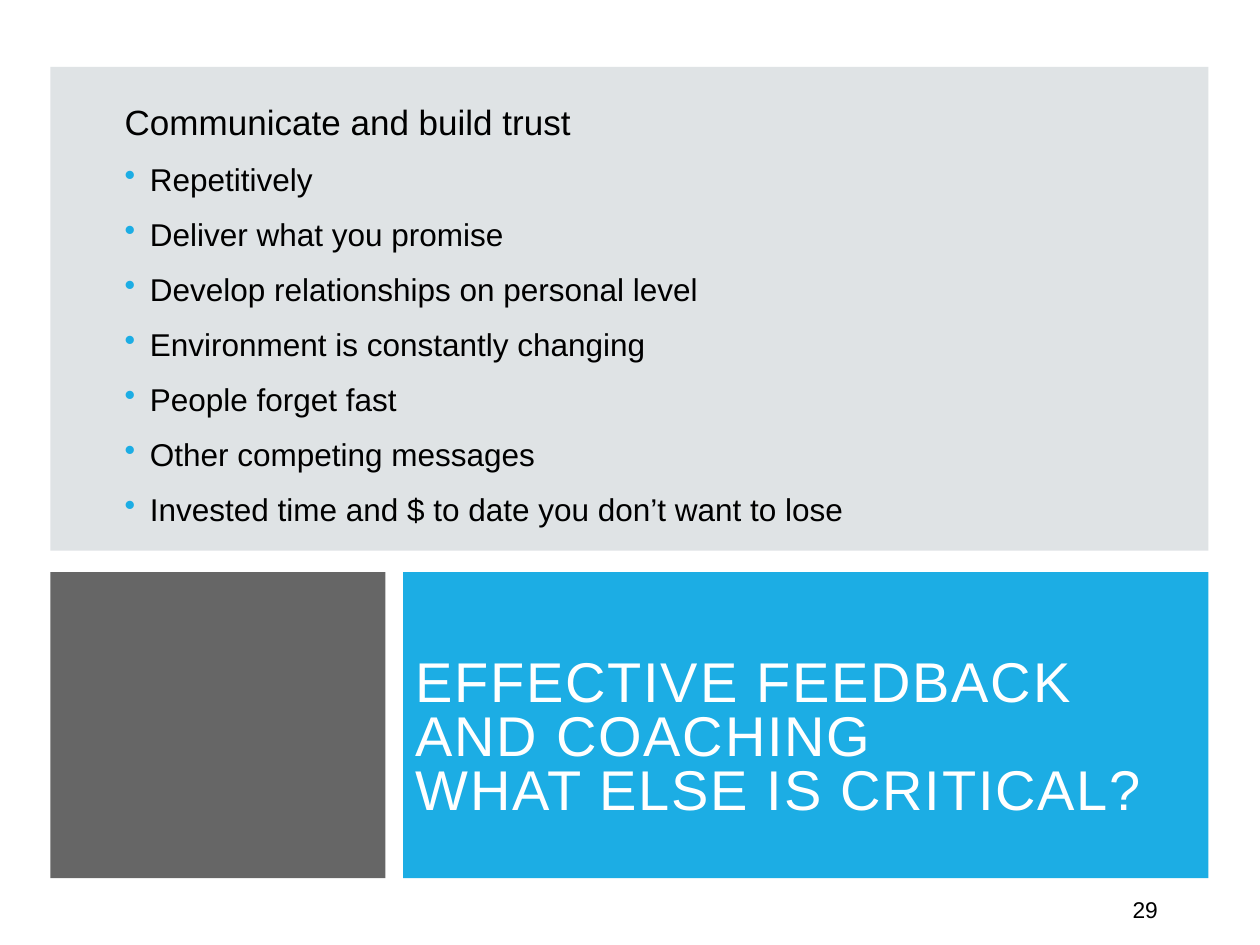
from dataclasses import dataclass

from lxml import etree
from pptx import Presentation
from pptx.enum import shapes, text
from pptx.oxml.ns import qn
from pptx.dml.color import RGBColor
from pptx.util import Pt

COLORS = {
    "white": "FFFFFF",
    "black": "000000",
    "pale": "DFE3E5",
    "blue": "1CADE4",
}
FONT = "Arial"
BULLETS = (
    "Repetitively",
    "Deliver what you promise",
    "Develop relationships on personal level",
    "Environment is constantly changing",
    "People forget fast",
    "Other competing messages",
    "Invested time and $ to date you don’t want to lose",
)


@dataclass(frozen=True)
class Box:
    left: float
    top: float
    width: float
    height: float

    def lengths(self) -> tuple:
        return tuple(Pt(n) for n in (self.left, self.top, self.width, self.height))


@dataclass(frozen=True)
class Panel:
    box: Box
    color: str
    opacity: int = 100


PANELS = (
    Panel(Box(0, 0, 720, 540), "white"),
    Panel(Box(28.8, 38.2, 661.7, 276.5), "pale"),
    Panel(Box(28.8, 326.9, 191.5, 175), "black", 60),
    Panel(Box(230.4, 326.9, 460.1, 175), "blue"),
)


def add_panel(slide, panel: Panel) -> None:
    """Draw a borderless filled rectangle."""
    shape = slide.shapes.add_shape(shapes.MSO_SHAPE.RECTANGLE, *panel.box.lengths())
    shape.shadow.inherit = False
    shape.line.fill.background()
    shape.fill.solid()
    shape.fill.fore_color.rgb = RGBColor.from_string(COLORS[panel.color])
    if panel.opacity < 100:
        color = shape.fill._xPr.find(f".//{qn('a:srgbClr')}")
        etree.SubElement(color, qn("a:alpha"), val=str(panel.opacity * 1000))


def add_frame(slide, box: Box, anchor=text.MSO_ANCHOR.MIDDLE):
    """Add a wrapping text box and return its text frame."""
    frame = slide.shapes.add_textbox(*box.lengths()).text_frame
    frame.word_wrap = True
    frame.vertical_anchor = anchor
    return frame


def write(paragraph, words: str, size: float, color: str, spacing: float, before: float = 0) -> None:
    """Fill and format one paragraph."""
    paragraph.text = words
    paragraph.font.name = FONT
    paragraph.font.size = Pt(size)
    paragraph.font.color.rgb = RGBColor.from_string(COLORS[color])
    paragraph.line_spacing = spacing
    paragraph.space_before = Pt(before)


def add_bullet(paragraph, color: str, indent: float) -> None:
    """Give a paragraph a coloured bullet with a hanging indent."""
    properties = paragraph._p.get_or_add_pPr()
    properties.set("marL", str(Pt(indent)))
    properties.set("indent", str(-Pt(indent)))
    bullet_color = etree.Element(qn("a:buClr"))
    etree.SubElement(bullet_color, qn("a:srgbClr"), val=COLORS[color])
    bullet = etree.Element(qn("a:buChar"), char="•")
    defaults = properties.find(qn("a:defRPr"))
    defaults.addprevious(bullet_color)
    defaults.addprevious(bullet)


def add_title(slide) -> None:
    """Add the letter-spaced title."""
    paragraph = add_frame(slide, Box(230.4, 345.6, 467.3, 154.8)).paragraphs[0]
    words = "EFFECTIVE FEEDBACK AND COACHING\vWHAT ELSE IS CRITICAL?"
    write(paragraph, words, 32, "white", 0.8)
    for run in paragraph.runs:
        run.font._element.set("spc", "100")


def add_body(slide) -> None:
    """Add the heading and its bullet list."""
    frame = add_frame(slide, Box(67.7, 72, 586.1, 250.6))
    frame.margin_left = frame.margin_right = frame.margin_top = Pt(3.6)
    frame.margin_bottom = Pt(36)
    write(frame.paragraphs[0], "Communicate and build trust", 20, "black", 0.9, 6)
    for words in BULLETS:
        paragraph = frame.add_paragraph()
        paragraph.level = 1
        write(paragraph, words, 18, "black", 0.9, 12)
        add_bullet(paragraph, "blue", 14.4)


def main() -> None:
    """Build and save the slide."""
    presentation = Presentation()
    presentation.slide_width, presentation.slide_height = Pt(720), Pt(540)
    slide = presentation.slides.add_slide(presentation.slide_layouts[6])
    for panel in PANELS:
        add_panel(slide, panel)
    add_title(slide)
    add_body(slide)
    number = add_frame(slide, Box(640.1, 509.8, 57.6, 21.6), text.MSO_ANCHOR.TOP)
    write(number.paragraphs[0], "29", 13, "black", 0.9)
    presentation.save("out.pptx")


if __name__ == "__main__":
    main()
